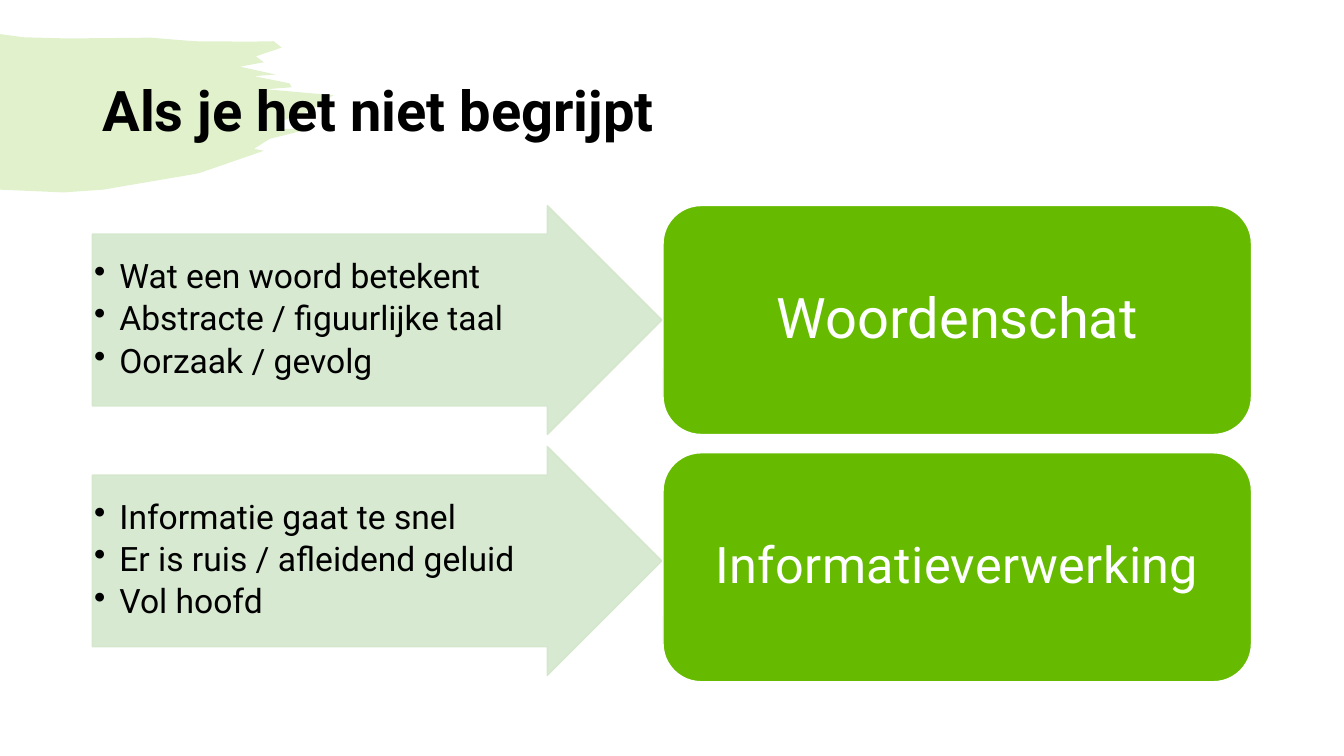
"""Build a slide that links comprehension problems to their causes."""
from dataclasses import dataclass

from lxml import etree
from pptx import Presentation
from pptx.dml.color import RGBColor
from pptx.enum import shapes, text
from pptx.oxml.ns import qn
from pptx.util import Cm, Pt

FONT = "Roboto"
GREEN = RGBColor(0x66, 0xBB, 0x00)
PALE_GREEN = RGBColor(0xD3, 0xE7, 0xCC)
BLACK = RGBColor(0, 0, 0)
WHITE = RGBColor(0xFF, 0xFF, 0xFF)

LEFT, TOP = 2.33, 5.18
ARROW_WIDTH, ARROW_PITCH = 14.35, 6.07
BOX_LEFT, BOX_WIDTH, BOX_PITCH = 16.71, 14.83, 6.23
HEIGHT = 5.77

BRUSH_OUTLINE = (
    (0, 0.86), (0.6, 0.94), (1.7, 0.97), (3.8, 0.95), (4.9, 1.04), (6.3, 1.05),
    (6.9, 1.04), (7.1, 1.2), (6.45, 1.42), (6.65, 1.57), (6.05, 1.68), (6.95, 1.88),
    (6.4, 1.92), (7.3, 2.1), (7.35, 2.2), (6.7, 2.25), (8.4, 2.4), (7.8, 2.8),
    (7.1, 3.05), (7.0, 3.25), (7.8, 3.25), (6.8, 3.5), (6.4, 3.75), (6.65, 3.8),
    (5, 4.37), (2.6, 4.78), (1.6, 4.85), (0, 4.78),
)


@dataclass(frozen=True)
class Topic:
    """A cause with its symptoms and the type settings of its box."""
    cause: str
    symptoms: tuple[str, ...]
    size: int
    side_inset: float
    end_inset: float
    spacing: int = 0


TOPICS = (
    Topic("Woordenschat",
          ("Wat een woord betekent", "Abstracte / figuurlijke taal", "Oorzaak / gevolg"),
          40, 0.43, 0.2),
    Topic("Informatieverwerking",
          ("Informatie gaat te snel", "Er is ruis / afleidend geluid", "Vol hoofd"),
          36, 0.38, 0.18, 30),
)


def paint(shape, fill: RGBColor, line: RGBColor | None = None, opacity: int = 100) -> None:
    """Give a shape a flat fill, an optional outline and an opacity in percent."""
    shape.shadow.inherit = False
    shape.fill.solid()
    shape.fill.fore_color.rgb = fill
    if line is None:
        shape.line.fill.background()
    else:
        shape.line.color.rgb = line
        shape.line.width = Pt(1)
    if opacity < 100:
        for color in shape._element.spPr.iter(qn("a:srgbClr")):
            etree.SubElement(color, qn("a:alpha"), val=str(opacity * 1000))


def set_frame(shape, side: float, end: float):
    """Set insets, wrapping and middle anchor, and return the text frame."""
    frame = shape.text_frame
    frame.word_wrap = True
    frame.vertical_anchor = text.MSO_ANCHOR.MIDDLE
    frame.margin_left = frame.margin_right = Cm(side)
    frame.margin_top = frame.margin_bottom = Cm(end)
    return frame


def style(paragraph, size: int, color: RGBColor, align, bold: bool = False) -> None:
    """Set font, alignment and line spacing of a paragraph."""
    paragraph.alignment = align
    paragraph.line_spacing = 0.9
    font = paragraph.font
    font.name, font.size, font.bold = FONT, Pt(size), bold
    font.color.rgb = color


def add_bullet(paragraph) -> None:
    """Give a paragraph a round bullet with a hanging indent."""
    properties = paragraph._p.get_or_add_pPr()
    properties.set("marL", str(Cm(0.64)))
    properties.set("indent", str(-Cm(0.64)))
    etree.SubElement(properties, qn("a:buChar"), char="•")


def add_brush(slide) -> None:
    """Draw the pale brush stroke behind the title."""
    start, *points = [(Cm(x), Cm(y)) for x, y in BRUSH_OUTLINE]
    builder = slide.shapes.build_freeform(*start)
    builder.add_line_segments(points, close=True)
    paint(builder.convert_to_shape(), GREEN, opacity=20)


def add_title(slide, title: str) -> None:
    """Write the slide title."""
    box = slide.shapes.add_textbox(Cm(LEFT), Cm(1.02), Cm(29.21), Cm(3.68))
    paragraph = set_frame(box, 0.25, 0.13).paragraphs[0]
    paragraph.text = title
    style(paragraph, 40, BLACK, text.PP_ALIGN.LEFT, bold=True)


def add_arrow(slide, topic: Topic, row: int) -> None:
    """Draw the arrow that lists the symptoms of a topic."""
    arrow = slide.shapes.add_shape(
        shapes.MSO_SHAPE.RIGHT_ARROW, Cm(LEFT), Cm(TOP + row * ARROW_PITCH),
        Cm(ARROW_WIDTH), Cm(HEIGHT))
    arrow.adjustments[0], arrow.adjustments[1] = 0.75, 0.5
    paint(arrow, PALE_GREEN, PALE_GREEN, 90)
    frame = set_frame(arrow, 0.04, 0.04)
    for index, symptom in enumerate(topic.symptoms):
        paragraph = frame.add_paragraph() if index else frame.paragraphs[0]
        paragraph.text = symptom
        add_bullet(paragraph)
        style(paragraph, 24, BLACK, text.PP_ALIGN.LEFT)
        paragraph.space_after = Pt(4.2)


def add_cause(slide, topic: Topic, row: int) -> None:
    """Draw the rounded box that names the cause of a topic."""
    box = slide.shapes.add_shape(
        shapes.MSO_SHAPE.ROUNDED_RECTANGLE, Cm(BOX_LEFT), Cm(TOP + row * BOX_PITCH),
        Cm(BOX_WIDTH), Cm(HEIGHT))
    paint(box, GREEN, WHITE)
    paragraph = set_frame(box, topic.side_inset, topic.end_inset).paragraphs[0]
    paragraph.text = topic.cause
    style(paragraph, topic.size, WHITE, text.PP_ALIGN.CENTER)
    if topic.spacing:
        paragraph._p.pPr.find(qn("a:defRPr")).set("spc", str(topic.spacing))


def main() -> None:
    """Create the presentation and save it."""
    presentation = Presentation()
    presentation.slide_width, presentation.slide_height = Cm(33.87), Cm(19.05)
    slide = presentation.slides.add_slide(presentation.slide_layouts[6])
    add_brush(slide)
    add_title(slide, "Als je het niet begrijpt")
    for row, topic in enumerate(TOPICS):
        add_arrow(slide, topic, row)
        add_cause(slide, topic, row)
    presentation.save("out.pptx")


if __name__ == "__main__":
    main()
